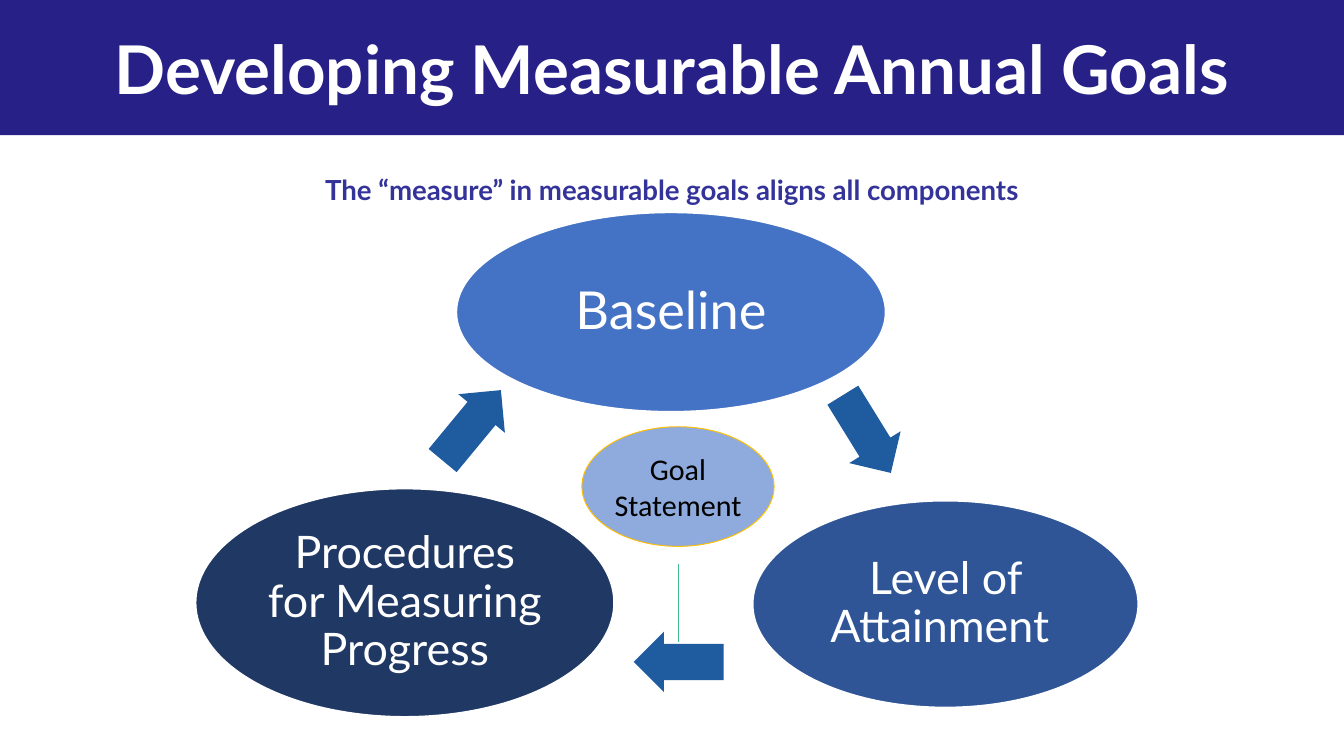
"""Builds a slide showing how three components of a measurable goal form a cycle."""
from dataclasses import dataclass

from lxml import etree
from pptx import Presentation
from pptx import util as u
from pptx.dml.color import RGBColor
from pptx.enum import shapes, text
from pptx.oxml.ns import qn

PX = 4572


@dataclass(frozen=True)
class Theme:
    band: str = "262087"
    subtitle: str = "333399"
    white: str = "FFFFFF"
    black: str = "000000"
    baseline: str = "4472C4"
    attainment: str = "2F5597"
    procedures: str = "203864"
    goal: str = "8FAADC"
    goal_line: str = "FFC000"
    arrow: str = "1E5B9F"
    divider: str = "43BB8D"
    font: str = "Lato"
    goal_font: str = "Calibri"
    title_size: float = 36
    subtitle_size: float = 14.8
    baseline_size: float = 28
    component_size: float = 24
    goal_size: float = 16.1


theme = Theme()


def add_shape(kind, bounds, fill, line=None, line_width=1):
    shape = page.shapes.add_shape(kind, *(value * PX for value in bounds))
    shape.shadow.inherit = False
    shape.fill.solid()
    shape.fill.fore_color.rgb = RGBColor.from_string(fill)
    if line:
        shape.line.color.rgb = RGBColor.from_string(line)
        shape.line.width = u.Pt(line_width)
    else:
        shape.line.fill.background()
    return shape


def write(shape, words, size, color, font=theme.font, bold=False,
          spacing=1.0, insets=(20, 10), anchor=text.MSO_ANCHOR.MIDDLE):
    frame = shape.text_frame
    frame.word_wrap = True
    frame.auto_size = text.MSO_AUTO_SIZE.NONE
    frame.vertical_anchor = anchor
    frame.margin_left = frame.margin_right = insets[0] * PX
    frame.margin_top = frame.margin_bottom = insets[1] * PX
    para = frame.paragraphs[0]
    para.alignment = text.PP_ALIGN.CENTER
    para.line_spacing = spacing
    span = para.add_run()
    span.text = words
    span.font.name = font
    span.font.size = u.Pt(size)
    span.font.bold = bold
    span.font.color.rgb = RGBColor.from_string(color)


deck = Presentation()
deck.slide_width = 2000 * PX
deck.slide_height = 1125 * PX
page = deck.slides.add_slide(deck.slide_layouts[5])

band = add_shape(shapes.MSO_SHAPE.RECTANGLE, (-2, 0, 2002, 201), theme.band)
title = page.shapes.title
title.left, title.top, title.width, title.height = 0, 0, 2000 * PX, 202 * PX
write(title, "Developing Measurable Annual Goals", theme.title_size, theme.white, bold=True)
page.shapes._spTree.remove(band._element)
page.shapes._spTree.insert(2, band._element)

subtitle = page.shapes.add_textbox(440 * PX, 223 * PX, 1120 * PX, 146 * PX)
write(subtitle, "The “measure” in measurable goals aligns all components",
      theme.subtitle_size, theme.subtitle, bold=True, spacing=1.5,
      anchor=text.MSO_ANCHOR.TOP)

components = [
    ("Baseline", (679, 316, 639, 297), theme.baseline, theme.baseline_size),
    ("Level of Attainment ", (1120, 745, 574, 308), theme.attainment, theme.component_size),
    ("Procedures for Measuring Progress", (291, 727, 623, 340), theme.procedures,
     theme.component_size),
]
for words, bounds, fill, size in components:
    oval = add_shape(shapes.MSO_SHAPE.OVAL, bounds, fill, theme.white)
    write(oval, words, size, theme.white, spacing=0.9, insets=(14, 6))

divider = page.shapes.add_connector(
    shapes.MSO_CONNECTOR.STRAIGHT, 1010 * PX, 840 * PX, 1010 * PX, 956 * PX)
divider.line.color.rgb = RGBColor.from_string(theme.divider)
divider.line.width = u.Pt(0.25)
etree.SubElement(divider._element.spPr, qn("a:effectLst"))

goal = add_shape(shapes.MSO_SHAPE.OVAL, (866, 635, 286, 178), theme.goal, theme.goal_line, 0.5)
write(goal, "Goal Statement", theme.goal_size, theme.black, theme.goal_font, insets=(0, 10))

arrows = [((943, 940, 134, 90), 180), ((634, 588, 136, 90), 309.6), ((1222, 601, 136, 90), 58.3)]
for bounds, angle in arrows:
    arrow = add_shape(shapes.MSO_SHAPE.RIGHT_ARROW, bounds, theme.arrow)
    arrow.adjustments[0] = 0.6
    arrow.adjustments[1] = 0.5
    arrow.rotation = angle

deck.save("out.pptx")
